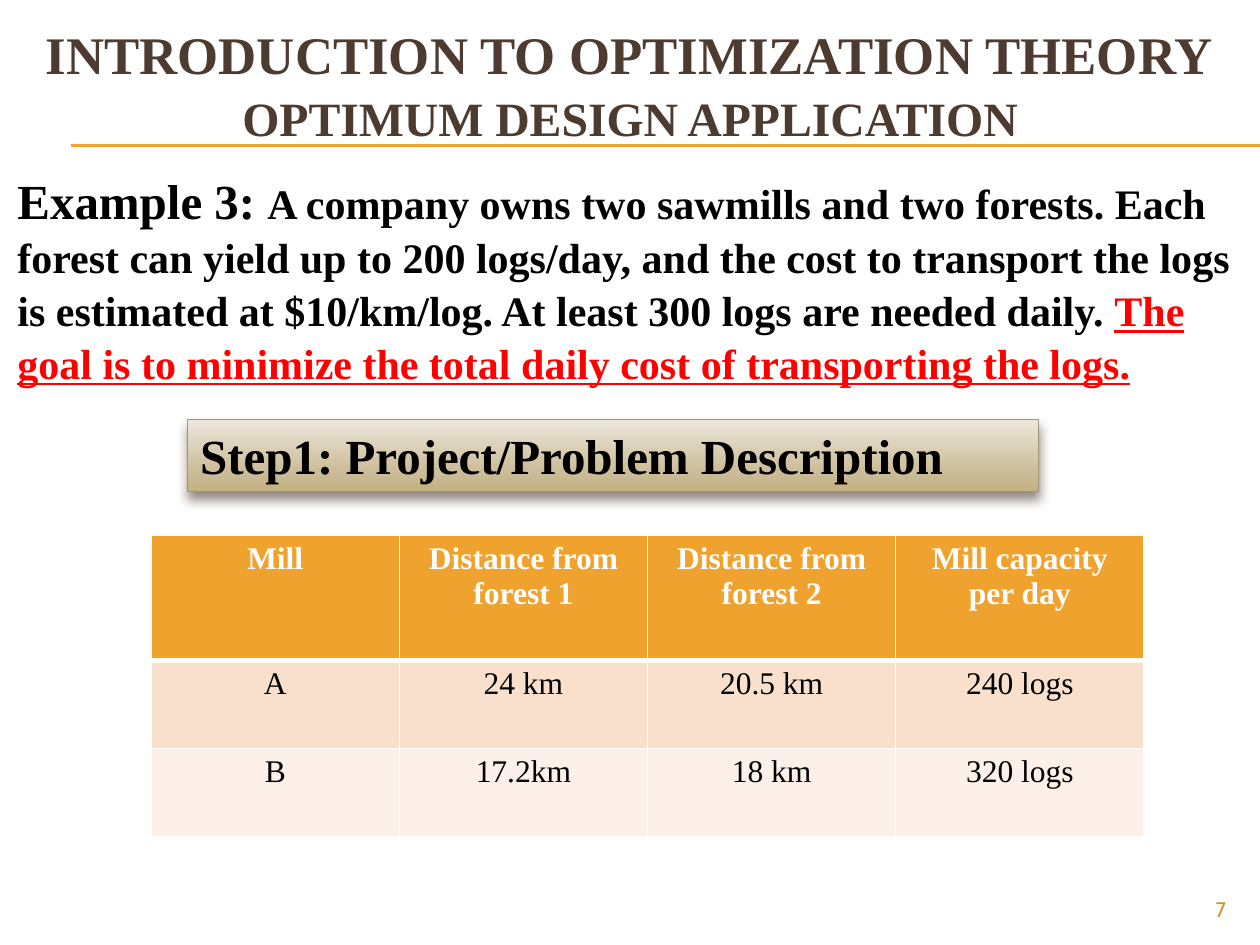
from copy import deepcopy

from lxml.etree import SubElement
from pptx import Presentation
from pptx.dml.color import RGBColor
from pptx.enum.shapes import MSO_CONNECTOR, MSO_SHAPE
from pptx.enum.text import MSO_ANCHOR, PP_ALIGN
from pptx.oxml.ns import qn
from pptx.util import Inches, Pt

SERIF = "Times New Roman"
AMBER, BROWN, BLACK, WHITE, RED = "F0A22E", "4E3B30", "000000", "FFFFFF", "FF0000"

TITLE = [("INTRODUCTION TO OPTIMIZATION THEORY", 30.2),
         ("OPTIMUM DESIGN APPLICATION", 27.3)]
EXAMPLE = [
    ("Example 3: ", 28, BLACK, False),
    ("A company owns two sawmills and two forests. Each forest can yield up to "
     "200 logs/day, and the cost to transport the logs is estimated at "
     "$10/km/log. At least 300 logs are needed daily. ", 24, BLACK, False),
    ("The goal is to minimize the total daily cost of transporting the logs.",
     24, RED, True),
]
STEP = "Step1: Project/Problem Description"
STEP_GRADIENT = [(0, "EDE8DC"), (0.72, "CCBD99"), (1, "C4B284")]
MILLS = [
    ("Mill", "Distance from forest 1", "Distance from forest 2",
     "Mill capacity per day"),
    ("A", "24 km", "20.5 km", "240 logs"),
    ("B", "17.2km", "18 km", "320 logs"),
]
ROW_HEIGHTS = [0.99, 0.7, 0.7]
ROW_FILLS = [AMBER, "F9E0CD", "FCF0E8"]
COLUMN_WIDTH = 1.97
DIVIDER_TOPS = [1.15, 1.16]


def color(value):
    return RGBColor.from_string(value)


def style(span, size, value=BLACK, bold=True, font=SERIF):
    span.font.name = font
    span.font.size = Pt(size)
    span.font.bold = bold
    span.font.color.rgb = color(value)


def add_text_box(page, left, top, width, height, anchor=MSO_ANCHOR.TOP):
    box = page.shapes.add_textbox(*map(Inches, (left, top, width, height)))
    frame = box.text_frame
    frame.word_wrap = True
    frame.vertical_anchor = anchor
    return frame


def add_divider(page, top):
    line = page.shapes.add_connector(MSO_CONNECTOR.STRAIGHT, Inches(0.56),
                                     Inches(top), Inches(10), Inches(top))
    line.line.color.rgb = color(AMBER)
    line.line.width = Pt(0.75)
    SubElement(line._element.spPr, qn("a:effectLst"))


def add_title(page):
    frame = add_text_box(page, 0.25, 0.11, 9.5, 1.08, MSO_ANCHOR.MIDDLE)
    para = frame.paragraphs[0]
    para.text = "\v".join(text for text, size in TITLE)
    para.alignment = PP_ALIGN.CENTER
    para.line_spacing = 1.07
    for span, (text, size) in zip(para.runs, TITLE):
        style(span, size, BROWN)


def add_example(page):
    frame = add_text_box(page, 0.04, 1.26, 9.96, 1.78)
    frame.margin_top = Inches(0.07)
    para = frame.paragraphs[0]
    para.line_spacing = 1.05
    for text, size, value, underline in EXAMPLE:
        span = para.add_run()
        span.text = text
        style(span, size, value)
        span.font.underline = underline


def add_step_banner(page):
    box = page.shapes.add_shape(MSO_SHAPE.RECTANGLE, Inches(1.49), Inches(3.33),
                                Inches(6.75), Inches(0.57))
    box.shadow.inherit = False
    box.fill.gradient()
    box.fill.gradient_angle = 270
    stop_list = box._element.spPr.find(".//" + qn("a:gsLst"))
    stop_list.append(deepcopy(stop_list[-1]))
    for stop, (position, value) in zip(box.fill.gradient_stops, STEP_GRADIENT):
        stop.position = position
        stop.color.rgb = color(value)
    box.line.color.rgb = color("A19574")
    box.line.width = Pt(0.79)

    effects = box._element.spPr.find(qn("a:effectLst"))
    shadow = SubElement(effects, qn("a:outerShdw"), blurRad=str(Pt(6)),
                        dist=str(Pt(4)), dir="5400000", rotWithShape="0")
    tint = SubElement(shadow, qn("a:srgbClr"), val=BROWN)
    SubElement(tint, qn("a:alpha"), val="60000")

    frame = box.text_frame
    frame.text = STEP
    frame.word_wrap = True
    frame.vertical_anchor = MSO_ANCHOR.TOP
    para = frame.paragraphs[0]
    para.alignment = PP_ALIGN.LEFT
    style(para.runs[0], 28)


def add_borders(cell, top, bottom):
    properties = cell._tc.get_or_add_tcPr()
    for side, width in (("L", 1), ("R", 1), ("T", top), ("B", bottom)):
        edge = SubElement(properties, qn("a:ln" + side), w=str(Pt(width)))
        fill = SubElement(edge, qn("a:solidFill"))
        SubElement(fill, qn("a:srgbClr"), val=WHITE)


def add_mill_table(page):
    rows, columns = len(MILLS), len(MILLS[0])
    table = page.shapes.add_table(
        rows, columns, Inches(1.2), Inches(4.25),
        Inches(COLUMN_WIDTH * columns), Inches(sum(ROW_HEIGHTS))).table
    for column in table.columns:
        column.width = Inches(COLUMN_WIDTH)
    for r, values in enumerate(MILLS):
        header = r == 0
        table.rows[r].height = Inches(ROW_HEIGHTS[r])
        for c, value in enumerate(values):
            cell = table.cell(r, c)
            add_borders(cell, 3 if r == 1 else 1, 3 if header else 1)
            cell.fill.solid()
            cell.fill.fore_color.rgb = color(ROW_FILLS[r])
            cell.text_frame.text = value
            para = cell.text_frame.paragraphs[0]
            para.alignment = PP_ALIGN.CENTER
            style(para.runs[0], 18, WHITE if header else BLACK, header)


def add_page_number(page):
    frame = add_text_box(page, 9, 7.08, 0.83, 0.27, MSO_ANCHOR.MIDDLE)
    frame.text = "7"
    para = frame.paragraphs[0]
    para.alignment = PP_ALIGN.RIGHT
    style(para.runs[0], 12, "D48F29", False, "Cabin")


def main():
    deck = Presentation()
    deck.slide_width, deck.slide_height = Inches(10), Inches(7.5)
    page = deck.slides.add_slide(deck.slide_layouts[6])
    for top in DIVIDER_TOPS:
        add_divider(page, top)
    add_page_number(page)
    add_example(page)
    add_title(page)
    add_step_banner(page)
    add_mill_table(page)
    deck.save("out.pptx")


if __name__ == "__main__":
    main()
